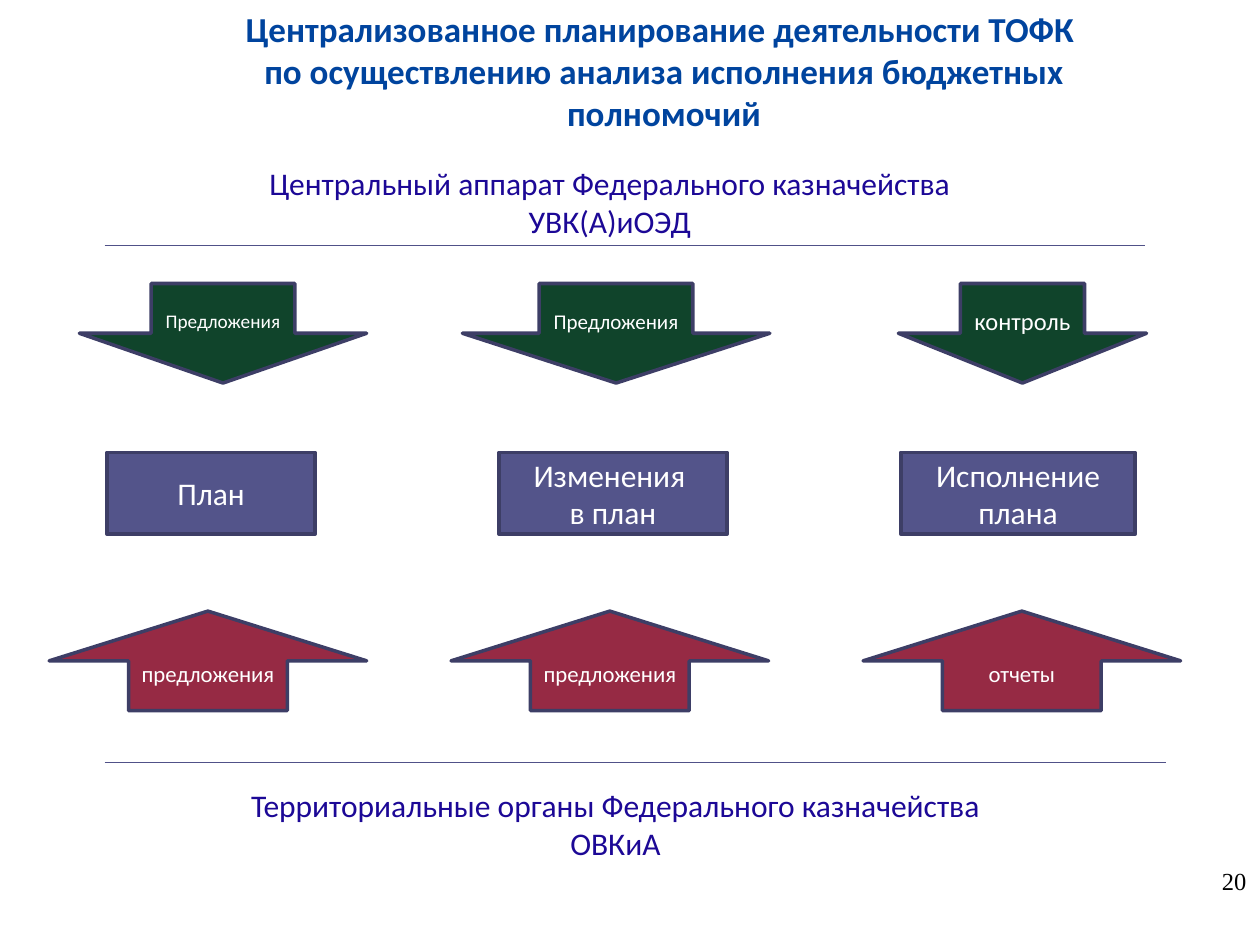
from lxml import etree
from pptx import Presentation
from pptx.dml.color import RGBColor
from pptx.enum import shapes, text
from pptx.oxml.ns import qn
from pptx.util import Inches, Pt

KIND = shapes.MSO_SHAPE
ALIGN = text.PP_ALIGN
NAVY = "1C0896"
EDGE = "3D3E66"


def rgb(code):
    return RGBColor.from_string(code)


def write(frame, words, size, color, font="Calibri", bold=False, align=ALIGN.CENTER):
    frame.word_wrap = True
    frame.text = words
    for para in frame.paragraphs:
        para.alignment = align
        for run in para.runs:
            run.font.name = font
            run.font.size = Pt(size)
            run.font.bold = bold
            run.font.color.rgb = rgb(color)


def label(slide, box, words, size, color, **style):
    area = slide.shapes.add_textbox(*map(Inches, box))
    write(area.text_frame, words, size, color, **style)


def block(slide, kind, box, fill, words, size):
    shape = slide.shapes.add_shape(kind, *map(Inches, box))
    shape.shadow.inherit = False
    shape.fill.solid()
    shape.fill.fore_color.rgb = rgb(fill)
    shape.line.color.rgb = rgb(EDGE)
    shape.line.width = Pt(2)
    frame = shape.text_frame
    frame.vertical_anchor = text.MSO_ANCHOR.MIDDLE
    frame.margin_left = frame.margin_right = Inches(0.08)
    write(frame, words, size, "FFFFFF")


def rule(slide, left, top, width):
    line = slide.shapes.add_connector(
        shapes.MSO_CONNECTOR.STRAIGHT,
        Inches(left), Inches(top), Inches(left + width), Inches(top))
    line.line.color.rgb = rgb("505188")
    line.line.width = Pt(0.75)
    etree.SubElement(line._element.spPr, qn("a:effectLst"))


def row(slide, kind, top, height, fill, items):
    """Place one row of blocks; each item is left, width, words, text size."""
    for left, width, words, size in items:
        block(slide, kind, (left, top, width, height), fill, words, size)


def build():
    deck = Presentation()
    deck.slide_width, deck.slide_height = Inches(10), Inches(7.5)
    slide = deck.slides.add_slide(deck.slide_layouts[6])

    label(slide, (1.56, 0.01, 7.42, 1.11),
          "Централизованное планирование деятельности ТОФК \v"
          "по осуществлению анализа исполнения бюджетных полномочий",
          20, "00449E", bold=True)
    label(slide, (1.14, 1.25, 7.4, 0.71),
          "Центральный аппарат Федерального казначейства\nУВК(А)иОЭД", 18, NAVY)
    label(slide, (1.2, 6.19, 7.37, 0.71),
          "Территориальные органы Федерального казначейства\nОВКиА", 18, NAVY)

    row(slide, KIND.RECTANGLE, 3.59, 0.65, "53548A", [
        (0.85, 1.65, "План", 18),
        (3.96, 1.81, "Изменения \vв план", 18),
        (7.15, 1.86, "Исполнение плана", 18)])
    rule(slide, 0.83, 1.95, 8.26)
    rule(slide, 0.83, 6.05, 8.42)
    row(slide, KIND.DOWN_ARROW, 2.25, 0.79, "10442B", [
        (0.63, 2.28, "Предложения", 11),
        (3.67, 2.44, "Предложения", 12),
        (7.13, 1.97, "контроль", 14)])
    row(slide, KIND.UP_ARROW, 4.85, 0.79, "962A44", [
        (0.39, 2.52, "предложения", 13),
        (3.58, 2.52, "предложения", 13),
        (6.85, 2.52, "отчеты", 13)])

    label(slide, (9.52, 6.82, 0.47, 0.52), "20", 14, "000000",
          font="Times New Roman", align=ALIGN.RIGHT)
    deck.save("out.pptx")


if __name__ == "__main__":
    build()
